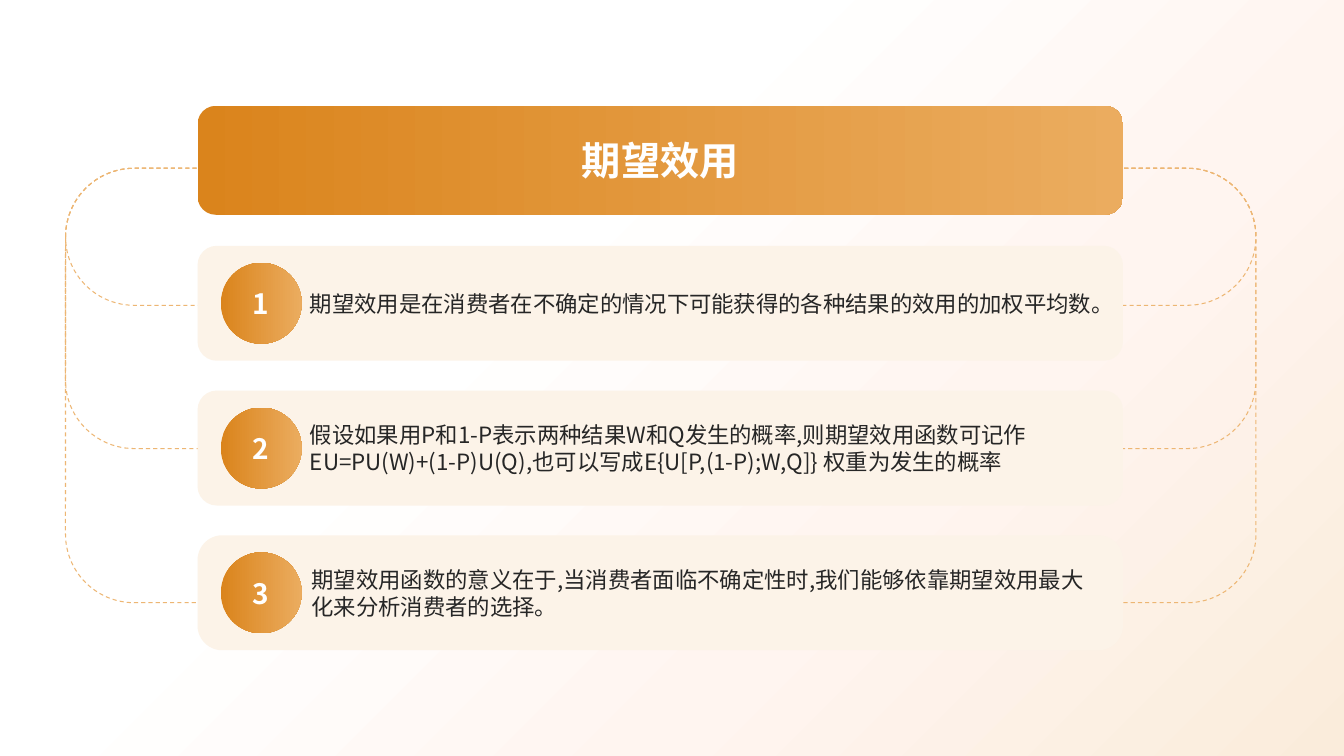
import copy

import pptx
import pptx.dml.color
import pptx.enum.dml
import pptx.enum.shapes
import pptx.enum.text
import pptx.oxml.ns
import pptx.util

Pt = pptx.util.Pt
RGBColor = pptx.dml.color.RGBColor
MSO_SHAPE = pptx.enum.shapes.MSO_SHAPE
qn = pptx.oxml.ns.qn

WHITE = RGBColor(0xFF, 0xFF, 0xFF)
BLUSH = RGBColor(0xFF, 0xF5, 0xF0)
SAND = RGBColor(0xFA, 0xEC, 0xDB)
CREAM = RGBColor(0xFC, 0xF3, 0xE8)
ORANGE = RGBColor(0xDA, 0x84, 0x1C)
LIGHT_ORANGE = RGBColor(0xEB, 0xAC, 0x5F)
LOOP_ORANGE = RGBColor(0xED, 0xB6, 0x73)
INK = RGBColor(0x26, 0x26, 0x26)

WIDTH, HEIGHT = 960, 540
BAR_LEFT, BAR_WIDTH, BAR_HEIGHT = 141.1, 661, 82.1
BAR_TOP, BAR_PITCH = 175.6, 103.4
HEADER_TOP, HEADER_HEIGHT = 75.6, 77.8
BADGE_SIZE, BADGE_INDENT = 57.8, 16.6
LOOP_LEFT, LOOP_TOP, LOOP_WIDTH, LOOP_RADIUS = 46.8, 120.2, 850.3, 49
LOOP_HEIGHTS = (97.9, 200.2, 310.3)
CORNER = 0.167

TITLE = "期望效用"
POINTS = (
    ("期望效用是在消费者在不确定的情况下可能获得的各种结果的效用的加权平均数。", CORNER),
    ("假设如果用P和1-P表示两种结果W和Q发生的概率,则期望效用函数可记作"
     "EU=PU(W)+(1-P)U(Q),也可以写成E{U[P,(1-P);W,Q]} 权重为发生的概率", CORNER),
    ("期望效用函数的意义在于,当消费者面临不确定性时,"
     "我们能够依靠期望效用最大化来分析消费者的选择。", 0.215),
)


class Deck:
    font = "Noto Sans CJK SC"
    accent = ((0, ORANGE), (1, LIGHT_ORANGE))

    def __init__(self, s):
        self.s = s

    def shape(self, kind, x, y, w, h, corner=None):
        """Add a preset shape with neither shadow nor outline."""
        sp = self.s.shapes.add_shape(kind, Pt(x), Pt(y), Pt(w), Pt(h))
        sp.shadow.inherit = False
        sp.line.fill.background()
        if corner is not None:
            sp.adjustments[0] = corner
        return sp

    def gradient(self, sp, stops, angle=0):
        """Fill with (position, colour) stops; angle is counter-clockwise."""
        sp.fill.gradient()
        sp.fill.gradient_angle = angle
        stop_list = sp._element.spPr.find(".//" + qn("a:gsLst"))
        for _ in stops[2:]:
            stop_list.append(copy.deepcopy(stop_list[0]))
        for stop, (position, color) in zip(sp.fill.gradient_stops, stops):
            stop.position = position
            stop.color.rgb = color

    def text(self, sp, text, size, color, bold=False, centred=True):
        tf = sp.text_frame
        tf.vertical_anchor = pptx.enum.text.MSO_ANCHOR.MIDDLE
        p = tf.paragraphs[0]
        align = pptx.enum.text.PP_ALIGN
        p.alignment = align.CENTER if centred else align.LEFT
        r = p.add_run()
        r.text = text
        r.font.size = Pt(size)
        r.font.bold = bold
        r.font.name = self.font
        r.font.color.rgb = color
        east_asian = r._r.rPr.makeelement(qn("a:ea"), {"typeface": self.font})
        r._r.rPr.find(qn("a:latin")).addnext(east_asian)

    def backdrop(self):
        sp = self.shape(MSO_SHAPE.RECTANGLE, 0, 0, WIDTH, HEIGHT)
        self.gradient(sp, ((0.37, WHITE), (0.67, BLUSH), (1, SAND)), 315)

    def loop(self, h):
        """Add a dashed outline that ties the header to one bar."""
        sp = self.shape(MSO_SHAPE.ROUNDED_RECTANGLE, LOOP_LEFT, LOOP_TOP,
                        LOOP_WIDTH, h, LOOP_RADIUS / h)
        sp.fill.background()
        sp.line.color.rgb = LOOP_ORANGE
        sp.line.width = Pt(0.75)
        sp.line.dash_style = pptx.enum.dml.MSO_LINE.DASH

    def bar(self, y, text, corner):
        sp = self.shape(MSO_SHAPE.ROUNDED_RECTANGLE, BAR_LEFT, y,
                        BAR_WIDTH, BAR_HEIGHT, corner)
        sp.fill.solid()
        sp.fill.fore_color.rgb = CREAM
        sp.text_frame.word_wrap = True
        sp.text_frame.margin_left = Pt(76.3)
        self.text(sp, text, 16, INK, centred=False)

    def badge(self, bar_y, number):
        sp = self.shape(MSO_SHAPE.OVAL, BAR_LEFT + BADGE_INDENT,
                        bar_y + (BAR_HEIGHT - BADGE_SIZE) / 2, BADGE_SIZE, BADGE_SIZE)
        self.gradient(sp, self.accent)
        sp.text_frame.word_wrap = False
        self.text(sp, str(number), 20, WHITE, bold=True)

    def header(self, text):
        sp = self.shape(MSO_SHAPE.ROUNDED_RECTANGLE, BAR_LEFT, HEADER_TOP,
                        BAR_WIDTH, HEADER_HEIGHT, CORNER)
        self.gradient(sp, self.accent)
        self.text(sp, text, 28, WHITE, bold=True)


def main():
    prs = pptx.Presentation()
    prs.slide_width, prs.slide_height = Pt(WIDTH), Pt(HEIGHT)
    deck = Deck(prs.slides.add_slide(prs.slide_layouts[6]))
    deck.backdrop()
    for h in LOOP_HEIGHTS:
        deck.loop(h)
    for i, (text, corner) in enumerate(POINTS):
        y = BAR_TOP + i * BAR_PITCH
        deck.bar(y, text, corner)
        deck.badge(y, i + 1)
    deck.header(TITLE)
    prs.save("out.pptx")


if __name__ == "__main__":
    main()
